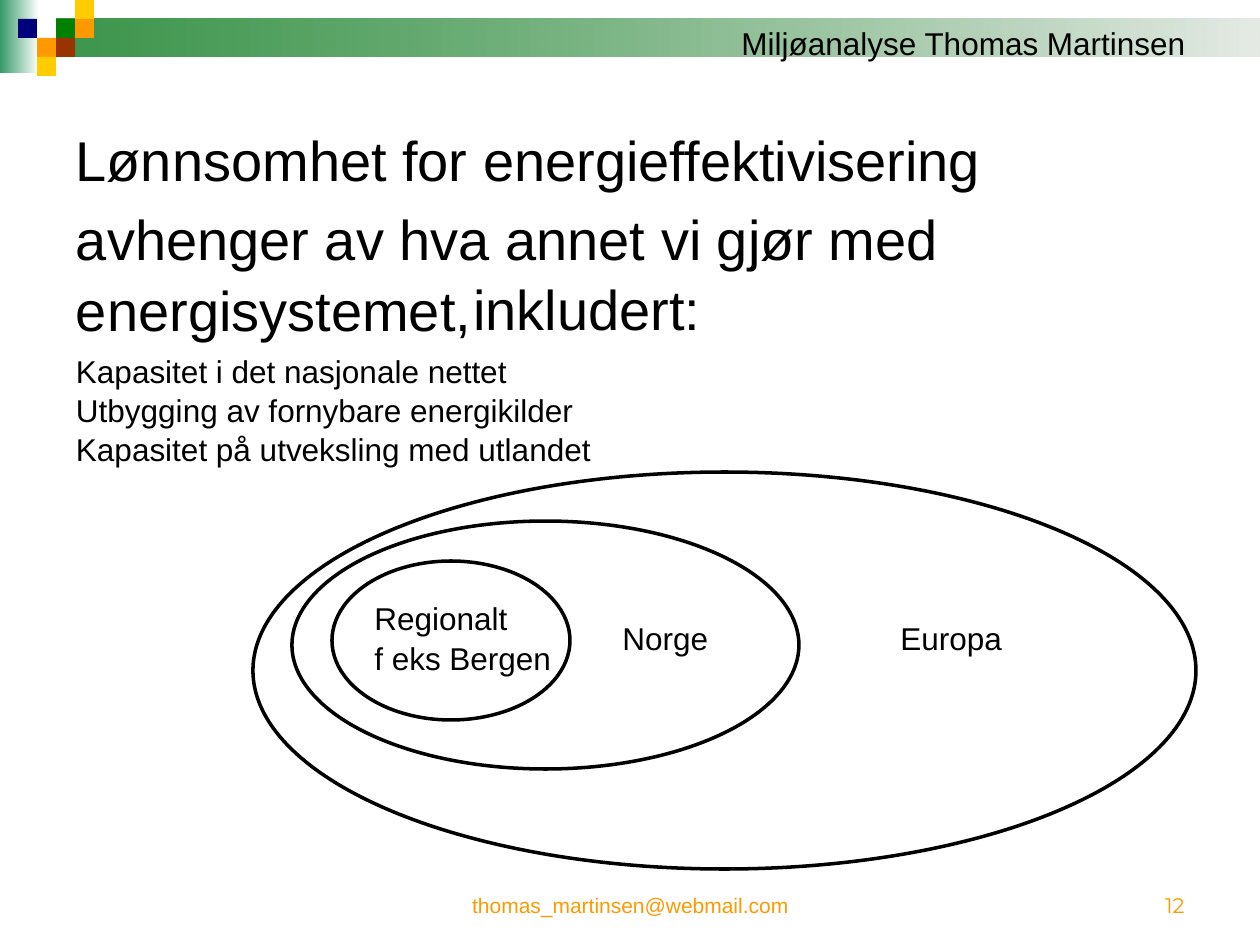
from dataclasses import dataclass

from lxml import etree
from pptx import Presentation
from pptx import util as u
from pptx.dml.color import RGBColor
from pptx.enum import shapes, text
from pptx.oxml.ns import qn

PX = 914400 / 126  # EMU in one px


@dataclass(frozen=True)
class Theme:
    font: str = "Arial"
    number_font: str = "Montserrat"
    ink: str = "000000"
    orange: str = "FF9900"
    yellow: str = "FFCC00"
    green: str = "008000"
    navy: str = "00007D"
    brown: str = "993300"
    edge: tuple = ("339966", "FFFFFF")
    band: tuple = ("067819", "E5EAE5")
    band_opacity: int = 78
    heading: int = 32
    body: int = 18
    footer: int = 12
    outline: int = 2
    spacing: float = 1.05


THEME = Theme()


def emu(*lengths):
    return [u.Emu(round(length * PX)) for length in lengths]


def add_plain_shape(slide, kind, box):
    shape = slide.shapes.add_shape(kind, *emu(*box))
    shape.shadow.inherit = False
    return shape


def add_block(slide, box, color):
    shape = add_plain_shape(slide, shapes.MSO_SHAPE.RECTANGLE, box)
    shape.line.fill.background()
    shape.fill.solid()
    shape.fill.fore_color.rgb = RGBColor.from_string(color)


def add_gradient(slide, box, colors, opacity=100):
    shape = add_plain_shape(slide, shapes.MSO_SHAPE.RECTANGLE, box)
    shape.line.fill.background()
    shape.fill.gradient()
    shape.fill.gradient_angle = 0
    for stop, color, position in zip(shape.fill.gradient_stops, colors, (0, 1)):
        stop.color.rgb = RGBColor.from_string(color)
        stop.position = position
    if opacity < 100:
        first_color = next(shape.element.iter(qn("a:srgbClr")))
        etree.SubElement(first_color, qn("a:alpha")).set("val", str(opacity * 1000))


def write(shape, words, size, color=THEME.ink, font=THEME.font,
          align=text.PP_ALIGN.LEFT, anchor=text.MSO_ANCHOR.TOP, wrap=False):
    frame = shape.text_frame
    frame.text = words
    frame.word_wrap = wrap
    frame.auto_size = text.MSO_AUTO_SIZE.NONE
    frame.vertical_anchor = anchor
    for paragraph in frame.paragraphs:
        paragraph.alignment = align
        paragraph.line_spacing = THEME.spacing
        for run in paragraph.runs:
            run.font.name = font
            run.font.size = u.Pt(size)
            run.font.color.rgb = RGBColor.from_string(color)


def add_text(slide, box, words, size, indent=0, **style):
    shape = slide.shapes.add_textbox(*emu(*box))
    write(shape, words, size, **style)
    if indent:
        shape.text_frame.margin_left = emu(indent)[0]


def add_header(slide, box):
    left, top, width, height = box
    add_gradient(slide, (left, top, 39, height), THEME.edge)
    add_gradient(slide, (left + 57, top + 19, width - 57, 38),
                 THEME.band, THEME.band_opacity)
    # Mosaic: column, row and colour of each tile
    tile = 19
    tiles = ((2, 1, THEME.green), (3, 0, THEME.yellow), (3, 1, THEME.orange),
             (1, 2, THEME.orange), (0, 1, THEME.navy), (2, 2, THEME.brown),
             (1, 3, THEME.yellow))
    for column, row, color in tiles:
        add_block(slide, (left + 18 + column * tile, top + row * tile, tile, tile), color)
    add_text(slide, (left + 729, top + 16, 470, 50),
             "Miljøanalyse Thomas Martinsen", THEME.body)


def add_title(slide, box):
    title = slide.shapes.title
    title.left, title.top, title.width, title.height = emu(*box)
    write(title, "Lønnsomhet for energieffektivisering", THEME.heading,
          anchor=text.MSO_ANCHOR.MIDDLE, wrap=True)


def add_argument(slide, box):
    left, top, width, height = box
    indent = 76
    add_text(slide, (left, top, width, height),
             "avhenger av hva annet vi gjør med energisystemet,",
             THEME.heading, indent, wrap=True)
    add_text(slide, (left + 461, top + 70, 255, 80), "inkludert:", THEME.heading)
    # Evenly spaced conditions
    conditions = ("Kapasitet i det nasjonale nettet",
                  "Utbygging av fornybare energikilder",
                  "Kapasitet på utveksling med utlandet")
    for row, condition in enumerate(conditions):
        add_text(slide, (left, top + 149 + row * 39, 609, 50),
                 condition, THEME.body, indent)


def add_nested_regions(slide, box):
    left, top, width, height = box
    # Innermost first: ellipse, label box and label
    regions = (
        ((79, 89, 238, 159), (109, 119, 204, 90), "Regionalt\nf eks Bergen"),
        ((39, 49, 507, 248), (357, 139, 112, 50), "Norge"),
        ((0, 0, width, height), (635, 139, 129, 50), "Europa"),
    )
    for ellipse, label_box, label in regions:
        x, y, *size = ellipse
        shape = add_plain_shape(slide, shapes.MSO_SHAPE.OVAL, (left + x, top + y, *size))
        shape.fill.background()
        shape.line.color.rgb = RGBColor.from_string(THEME.ink)
        shape.line.width = u.Pt(THEME.outline)
        x, y, *size = label_box
        add_text(slide, (left + x, top + y, *size), label, THEME.body)


def add_footer(slide, box):
    left, top, width, height = box
    style = dict(color=THEME.orange, anchor=text.MSO_ANCHOR.BOTTOM, wrap=True)
    add_text(slide, (left + 368, top, 399, height), "thomas_martinsen@webmail.com",
             THEME.footer, align=text.PP_ALIGN.CENTER, **style)
    add_text(slide, (left + width - 294, top, 294, height), "12", THEME.footer,
             font=THEME.number_font, align=text.PP_ALIGN.RIGHT, **style)


def main():
    presentation = Presentation()
    presentation.slide_width, presentation.slide_height = emu(1260, 945)
    slide = presentation.slides.add_slide(presentation.slide_layouts[5])
    add_header(slide, (0, 0, 1260, 73))
    add_title(slide, (63, 63, 1134, 189))
    add_footer(slide, (63, 861, 1134, 63))
    add_nested_regions(slide, (253, 472, 943, 397))
    add_argument(slide, (0, 195, 968, 217))
    presentation.save("out.pptx")


if __name__ == "__main__":
    main()
